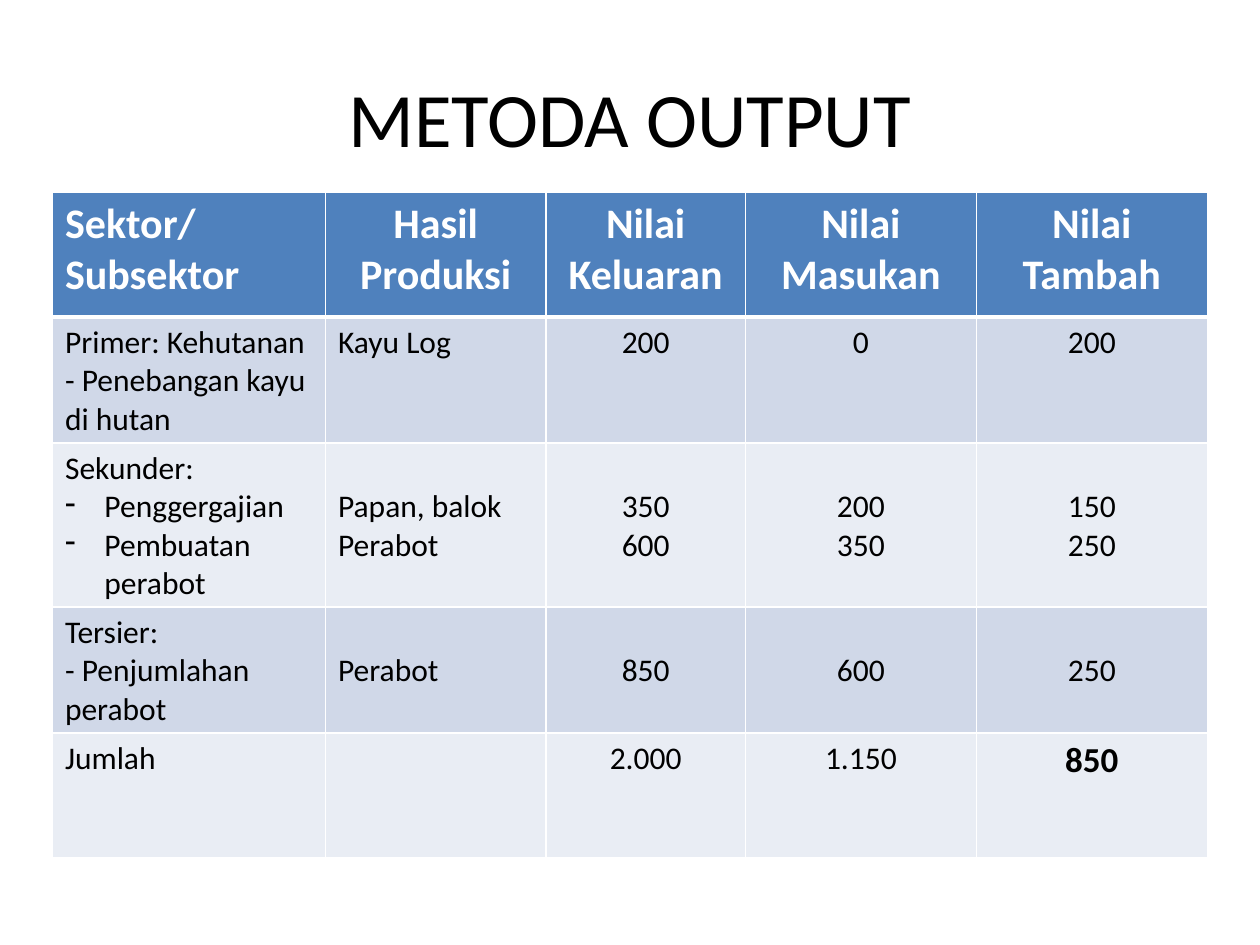
from dataclasses import dataclass

from lxml.etree import SubElement
from pptx import Presentation
from pptx.dml.color import RGBColor as Rgb
from pptx.enum.text import MSO_ANCHOR as Anchor, PP_ALIGN as Align
from pptx.oxml.ns import qn
from pptx.util import Pt


@dataclass(frozen=True)
class Theme:
    font: str = "Calibri"
    ink: str = "000000"
    white: str = "FFFFFF"
    header: str = "4F81BD"
    bands: tuple = ("D0D8E8", "E9EDF4")
    title_size: int = 44
    header_size: int = 24
    body_size: int = 18
    total_size: int = 20
    rule: int = 1
    header_rule: int = 3


class SlideWriter:
    def __init__(self, page, theme):
        self.page, self.theme = page, theme

    def style(self, para, size, color, bold=False, align=Align.LEFT):
        para.alignment = align
        font = para.font
        font.name, font.size, font.bold = self.theme.font, Pt(size), bold
        font.color.rgb = Rgb.from_string(color)

    def title(self, text, left, top, width, height):
        box = self.page.shapes.add_textbox(Pt(left), Pt(top), Pt(width), Pt(height))
        frame = box.text_frame
        frame.word_wrap = True
        frame.vertical_anchor = Anchor.MIDDLE
        frame.text = text
        self.style(frame.paragraphs[0], self.theme.title_size, self.theme.ink, align=Align.CENTER)

    def bullet(self, para, indent):
        props = para._p.get_or_add_pPr()
        props.set("marL", str(Pt(indent)))
        props.set("indent", str(-Pt(indent)))
        SubElement(props, qn("a:buChar"), char="-")

    def borders(self, cell, top, bottom):
        props = cell._tc.get_or_add_tcPr()
        rule = self.theme.rule
        for side, width in (("L", rule), ("R", rule), ("T", top), ("B", bottom)):
            line = SubElement(props, qn(f"a:ln{side}"), w=str(Pt(width)))
            fill = SubElement(line, qn("a:solidFill"))
            SubElement(fill, qn("a:srgbClr"), val=self.theme.white)

    def cell(self, cell, text, row, col, is_total, drop):
        theme = self.theme
        is_header = row == 0
        self.borders(cell, theme.header_rule if row == 1 else theme.rule,
                     theme.header_rule if is_header else theme.rule)
        cell.fill.solid()
        cell.fill.fore_color.rgb = Rgb.from_string(
            theme.header if is_header else theme.bands[(row - 1) % 2])
        if drop:
            cell.margin_top = Pt(drop)

        size = theme.header_size if is_header else theme.total_size if is_total else theme.body_size
        centred = col > 1 or (is_header and col == 1)
        frame = cell.text_frame
        for index, line in enumerate(text.split("\n")):
            para = frame.paragraphs[0] if index == 0 else frame.add_paragraph()
            if line.startswith("•"):
                self.bullet(para, 22.5)
            para.text = line.removeprefix("•")
            self.style(para, size, theme.white if is_header else theme.ink,
                       is_header or is_total, Align.CENTER if centred else Align.LEFT)

    def table(self, rows, widths, left, top, row_height, dropped_rows):
        frame = self.page.shapes.add_table(
            len(rows), len(widths), Pt(left), Pt(top), Pt(sum(widths)), Pt(row_height * len(rows)))
        grid = frame.table
        for column, width in zip(grid.columns, widths):
            column.width = Pt(width)
        last = (len(rows) - 1, len(widths) - 1)
        for row, texts in enumerate(rows):
            grid.rows[row].height = Pt(row_height)
            for col, text in enumerate(texts):
                # Values start one line down, level with their subsector
                drop = 25.6 if row in dropped_rows and col > 0 else 0
                self.cell(grid.cell(row, col), text, row, col, (row, col) == last, drop)


# A leading "•" marks a paragraph with a hanging dash
ROWS = [
    ("Sektor/\nSubsektor", "Hasil Produksi", "Nilai Keluaran", "Nilai Masukan", "Nilai Tambah"),
    ("Primer: Kehutanan\n- Penebangan kayu di hutan", "Kayu Log", "200", "0", "200"),
    ("Sekunder:\n•Penggergajian\n•Pembuatan perabot",
     "Papan, balok\nPerabot", "350\n600", "200\n350", "150\n250"),
    ("Tersier:\n- Penjumlahan perabot", "Perabot", "850", "600", "250"),
    ("Jumlah", "", "2.000", "1.150", "850"),
]


def main():
    deck = Presentation()
    deck.slide_width, deck.slide_height = Pt(720), Pt(540)
    writer = SlideWriter(deck.slides.add_slide(deck.slide_layouts[6]), Theme())

    # Heading
    writer.title("METODA OUTPUT", 36, 21.6, 648, 90)

    # Output by sector
    writer.table(ROWS, widths=(156, 126, 114, 132, 132), left=30, top=110,
                 row_height=71.2, dropped_rows=(2, 3))

    deck.save("out.pptx")


if __name__ == "__main__":
    main()
